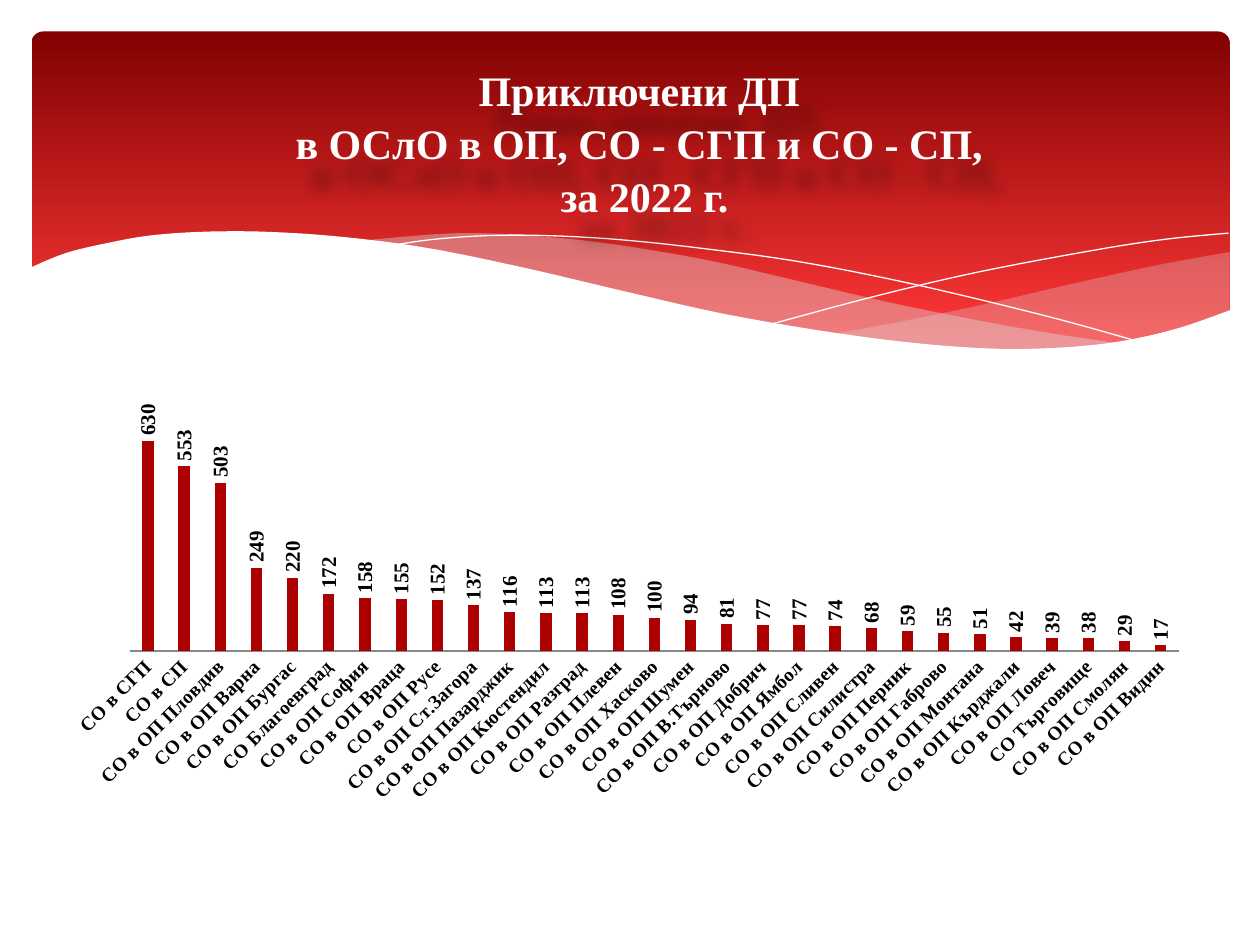
from dataclasses import dataclass
from typing import Optional

from lxml.etree import SubElement
from pptx import Presentation
from pptx.chart.data import CategoryChartData
from pptx.dml.color import RGBColor
from pptx.enum.chart import XL_CHART_TYPE, XL_LABEL_POSITION, XL_TICK_MARK
from pptx.enum.shapes import MSO_SHAPE
from pptx.enum.text import MSO_ANCHOR, PP_ALIGN
from pptx.oxml import parse_xml
from pptx.oxml.ns import nsdecls, qn
from pptx.util import Inches, Pt

WHITE = RGBColor(0xFF, 0xFF, 0xFF)
BLACK = RGBColor(0, 0, 0)
DARK_RED = RGBColor(0x82, 0x01, 0x01)
BRIGHT_RED = RGBColor(0xFE, 0x37, 0x37)
BAR_RED = RGBColor(0xAD, 0x01, 0x01)
MIST = RGBColor(0xDE, 0xDE, 0xE0)
GREY = RGBColor(0x89, 0x89, 0x89)
FONT = "Times New Roman"
COLUMNS, ROWS = 100, 75
CELL = Inches(0.1)
TITLE = "Приключени ДП \vв ОСлО в ОП, СО - СГП и СО - СП, \vза 2022 г."

Points = list[tuple[float, float]]


@dataclass(frozen=True)
class Wave:
    """Curves joined in order, in grid cells, with a fill or a line."""
    curves: tuple[Points, ...]
    fill: Optional[RGBColor] = None
    opacity: int = 100


WAVES = (
    Wave(([(97.6, 20), (92.1, 21), (86.1, 22.3), (77.9, 24.2), (70.6, 25.7), (66.1, 26.5)],
          [(66.1, 26.5), (70.5, 27.1), (75.7, 27.6), (80.3, 27.8), (85.4, 27.7),
           (89.7, 27), (93.5, 26.2), (97.6, 24.7)]), MIST, 29),
    Wave(([(89.3, 27.3), (83.7, 26.5), (77.5, 25.4), (70.6, 24), (62.9, 22.2), (56.9, 20.8),
           (51.4, 19.8), (46.5, 19.1), (42, 18.7), (38, 18.5), (34.4, 18.6), (28.6, 19.1)],
          [(28.6, 19.1), (34.2, 19.9), (40.4, 21.1), (49.1, 23.2), (56.6, 24.8), (63.4, 26.1),
           (69.5, 27), (74.8, 27.6), (79.6, 27.8), (84.8, 27.7), (89.3, 27.3)]), MIST, 40),
    Wave(([(30.9, 19.5), (34.4, 19), (38.7, 18.7), (43.3, 18.7), (48.9, 19), (55.6, 19.7),
           (63.6, 20.8), (72.7, 22.6), (83.1, 25.1), (90.7, 27.2)],)),
    Wave(([(61.3, 25.7), (69.5, 23.5), (77.6, 21.6), (86.6, 19.9), (92.4, 19), (97.5, 18.5)],)),
    Wave(([(97.7, 24.6), (93, 26.2), (87.5, 27.3), (80.9, 27.7), (74.4, 27.4), (66.8, 26.5),
           (57.9, 25), (50.3, 23.3), (41.8, 21.3), (34, 19.7), (27.1, 18.8), (21.1, 18.4),
           (16.1, 18.4), (11.9, 18.7), (8.5, 19.3), (5.2, 20.1), (2.3, 21.3)],
          [(2.3, 32.9), (97.7, 32.9)]), WHITE),
)

COUNTS = {
    "СО в СГП": 630, "СО в СП": 553, "СО в ОП Пловдив": 503, "СО в ОП Варна": 249,
    "СО в ОП Бургас": 220, "СО Благоевград": 172, "СО в ОП София": 158,
    "СО в ОП Враца": 155, "СО в ОП Русе": 152, "СО в ОП Ст.Загора": 137,
    "СО в ОП Пазарджик": 116, "СО в ОП Кюстендил": 113, "СО в ОП Разград": 113,
    "СО в ОП Плевен": 108, "СО в ОП Хасково": 100, "СО в ОП Шумен": 94,
    "СО в ОП В.Търново": 81, "СО в ОП Добрич": 77, "СО в ОП Ямбол": 77,
    "СО в ОП Сливен": 74, "СО в ОП Силистра": 68, "СО в ОП Перник": 59,
    "СО в ОП Габрово": 55, "СО в ОП Монтана": 51, "СО в ОП Кърджали": 42,
    "СО в ОП Ловеч": 39, "СО Търговище": 38, "СО в ОП Смолян": 29, "СО в ОП Видин": 17,
}


def cells(*lengths: float) -> list[int]:
    """Turn grid cells into slide lengths."""
    return [round(length * CELL) for length in lengths]


def smooth_curve(anchors: Points, steps: int = 8) -> Points:
    """Return points of a Catmull-Rom curve through the anchors."""
    if len(anchors) == 2:
        return anchors
    padded = [anchors[0], *anchors, anchors[-1]]
    points = [anchors[0]]
    for a, b, c, d in zip(padded, padded[1:], padded[2:], padded[3:]):
        for step in range(1, steps + 1):
            t = step / steps
            points.append(tuple(
                q + t * (r - p + t * (2 * p - 5 * q + 4 * r - s + t * (3 * (q - r) + s - p))) / 2
                for p, q, r, s in zip(a, b, c, d)))
    return points


def draw_banner(page) -> None:
    """Draw the rounded red gradient banner."""
    banner = page.shapes.add_shape(MSO_SHAPE.ROUNDED_RECTANGLE, *cells(2.5, 2.5, 95.1, 27))
    banner.adjustments[0] = 0.034
    banner.shadow.inherit = False
    banner.line.fill.background()
    banner.fill.gradient()
    banner.fill.gradient_angle = 270
    for stop, color, position in zip(banner.fill.gradient_stops, (DARK_RED, BRIGHT_RED), (0, 0.9)):
        stop.color.rgb = color
        stop.position = position


def draw_wave(page, wave: Wave) -> None:
    """Draw a filled wave, or a white hairline when it has no fill."""
    points = [tuple(cells(*point)) for curve in wave.curves for point in smooth_curve(curve)]
    builder = page.shapes.build_freeform(*points[0])
    builder.add_line_segments(points[1:], close=wave.fill is not None)
    shape = builder.convert_to_shape()
    shape.shadow.inherit = False
    if wave.fill is None:
        shape.fill.background()
        shape.line.color.rgb = WHITE
        shape.line.width = Pt(0)
        return
    shape.line.fill.background()
    shape.fill.solid()
    shape.fill.fore_color.rgb = wave.fill
    if wave.opacity < 100:
        color = shape._element.spPr.find(qn("a:solidFill"))[0]
        SubElement(color, qn("a:alpha"), val=str(wave.opacity * 1000))


def style_font(font, size: int, color: RGBColor) -> None:
    """Apply the bold serif lettering."""
    font.name, font.size, font.bold = FONT, Pt(size), True
    font.color.rgb = color


def draw_title(page) -> None:
    """Draw the centred title with its soft shadow."""
    box = page.shapes.add_textbox(*cells(5.1, 4.4, 92.1, 13.7))
    frame = box.text_frame
    frame.word_wrap = True
    frame.vertical_anchor = MSO_ANCHOR.MIDDLE
    frame.text = TITLE
    para = frame.paragraphs[0]
    para.alignment = PP_ALIGN.CENTER
    para.line_spacing = 1.05
    for span in para.runs:
        style_font(span.font, 24, WHITE)
    box._element.spPr.append(parse_xml(
        f'<a:effectLst {nsdecls("a")}><a:outerShdw blurRad="100000" dist="230000" dir="3600000">'
        '<a:srgbClr val="000000"><a:alpha val="35000"/></a:srgbClr></a:outerShdw></a:effectLst>'))


def rotate_text(element, degrees: int) -> None:
    """Turn the chart text held by the element."""
    body = element.find(qn("c:txPr")).find(qn("a:bodyPr"))
    body.set("rot", str(degrees * 60000))
    body.set("vert", "horz")


def place_plot(chart, x: float, y: float, w: float, h: float) -> None:
    """Fix the inner plot area as shares of the chart."""
    area = chart._chartSpace.chart.plotArea
    for layout in area.findall(qn("c:layout")):
        area.remove(layout)
    area.insert(0, parse_xml(
        f'<c:layout {nsdecls("c")}><c:manualLayout><c:layoutTarget val="inner"/>'
        '<c:xMode val="edge"/><c:yMode val="edge"/>'
        f'<c:x val="{x}"/><c:y val="{y}"/><c:w val="{w}"/><c:h val="{h}"/>'
        '</c:manualLayout></c:layout>'))


def draw_chart(page) -> None:
    """Draw the column chart of completed cases."""
    data = CategoryChartData()
    data.categories = list(COUNTS)
    data.add_series("Series 1", list(COUNTS.values()))
    chart = page.shapes.add_chart(
        XL_CHART_TYPE.COLUMN_CLUSTERED, *cells(4.3, 23.3, 92.5, 40.9), data).chart
    chart.has_title = chart.has_legend = False
    chart.font.name, chart.font.size = "Cabin", Pt(18)
    chart.font.color.rgb = BLACK
    place_plot(chart, 0.065, 0.24, 0.9, 0.454)

    plot = chart.plots[0]
    plot.vary_by_categories = False
    plot.gap_width, plot.overlap = 219, -76
    series = plot.series[0]
    series.format.fill.solid()
    series.format.fill.fore_color.rgb = BAR_RED
    labels = series.data_labels
    labels.show_value = True
    labels.position = XL_LABEL_POSITION.OUTSIDE_END
    style_font(labels.font, 12, BLACK)
    rotate_text(labels._element, -90)

    axis = chart.category_axis
    axis.major_tick_mark = axis.minor_tick_mark = XL_TICK_MARK.NONE
    axis.format.line.color.rgb = GREY
    style_font(axis.tick_labels.font, 11, BLACK)
    rotate_text(axis._element, -45)
    scale = chart.value_axis
    scale.minimum_scale, scale.maximum_scale = 0, 700
    scale.has_major_gridlines = False
    scale.visible = False


def main() -> None:
    """Build and save the slide."""
    deck = Presentation()
    deck.slide_width, deck.slide_height = cells(COLUMNS, ROWS)
    page = deck.slides.add_slide(deck.slide_layouts[6])
    draw_banner(page)
    for wave in WAVES:
        draw_wave(page, wave)
    draw_chart(page)
    draw_title(page)
    deck.save("out.pptx")


if __name__ == "__main__":
    main()
